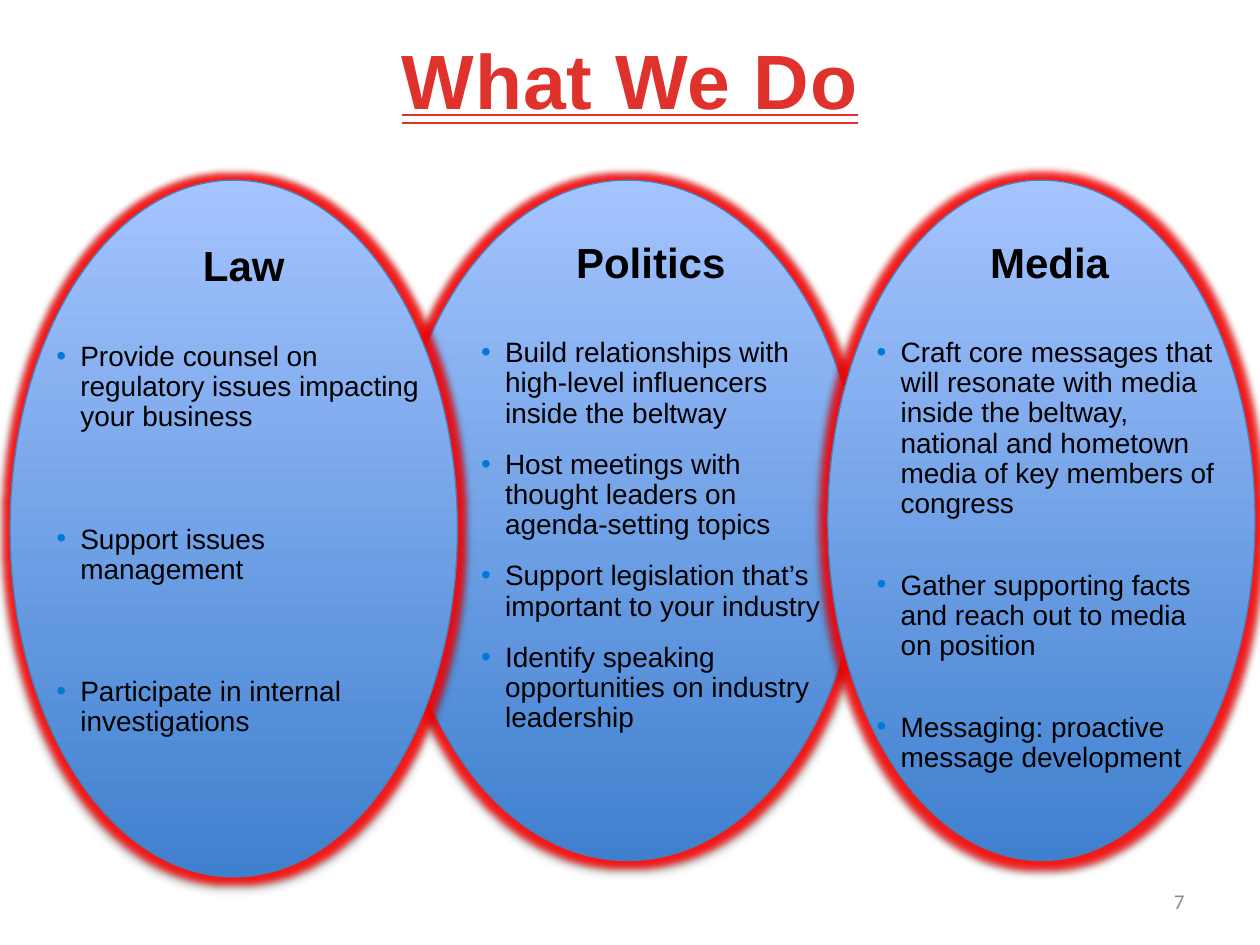
from lxml import etree
from pptx import Presentation
from pptx.dml.color import RGBColor
from pptx.enum.shapes import MSO_SHAPE as Shape
from pptx.enum.text import MSO_ANCHOR as Anchor, MSO_UNDERLINE as Underline, PP_ALIGN as Align
from pptx.oxml import parse_xml
from pptx.oxml.ns import nsdecls, qn
from pptx.util import Inches, Pt

BLANK_LAYOUT = 6
OVAL_TOP = 1.43
HEADING_GAP = 29.3

# Oval: left, width, height. Text: left, top, width, height. Gap: points between bullets.
POLITICS = {
    "oval": (3.12, 3.72, 5.4),
    "text": (3.72, 1.87, 2.89, 4.29),
    "heading": "Politics",
    "gap": 12,
    "bullets": [
        "Build relationships with high-level influencers inside the beltway",
        "Host meetings with thought leaders on agenda-setting topics",
        "Support legislation that’s important to your industry",
        "Identify speaking opportunities on industry leadership",
    ],
}
MEDIA = {
    "oval": (6.57, 3.39, 5.4),
    "text": (6.86, 1.87, 2.94, 4.7),
    "heading": "Media",
    "gap": 29.3,
    "bullets": [
        "Craft core messages that will resonate with media inside the beltway, "
        "national and hometown media of key members of congress",
        "Gather supporting facts and reach out to media on position",
        "Messaging: proactive message development",
    ],
}
LAW = {
    "oval": (0.08, 3.55, 5.53),
    "text": (0.35, 1.9, 3.17, 4.32),
    "heading": "Law",
    "gap": 52.6,
    "bullets": [
        "Provide counsel on regulatory issues impacting your business",
        "Support issues management",
        "Participate in internal investigations",
    ],
}
AREAS = [POLITICS, MEDIA, LAW]  # back to front


def color(hex_string):
    return RGBColor.from_string(hex_string)


def add_text_box(slide, left, top, width, height, anchor=Anchor.TOP):
    box = slide.shapes.add_textbox(Inches(left), Inches(top), Inches(width), Inches(height))
    frame = box.text_frame
    frame.word_wrap = True
    frame.vertical_anchor = anchor
    return frame


def set_text(paragraph, text, size, hex_string, align=Align.LEFT, bold=False, font="Arial"):
    paragraph.text = text
    paragraph.alignment = align
    paragraph.font.name = font
    paragraph.font.size = Pt(size)
    paragraph.font.bold = bold
    paragraph.font.color.rgb = color(hex_string)


def add_bullet(paragraph, hex_string):
    """Give the paragraph a hanging indent and a coloured round bullet."""
    properties = paragraph._p.get_or_add_pPr()
    properties.set("marL", str(Inches(0.19)))
    properties.set("indent", str(-Inches(0.19)))
    bullet_color = etree.SubElement(properties, qn("a:buClr"))
    etree.SubElement(bullet_color, qn("a:srgbClr"), val=hex_string)
    etree.SubElement(properties, qn("a:buFont"), typeface="Arial")
    etree.SubElement(properties, qn("a:buChar"), char="•")


def add_glow_and_shadow(shape):
    shape.shadow.inherit = False
    effects = shape._element.spPr.find(qn("a:effectLst"))
    effects.append(parse_xml(
        f'<a:glow {nsdecls("a")} rad="{Pt(8)}">'
        '<a:srgbClr val="FF0000"><a:alpha val="85000"/></a:srgbClr></a:glow>'))
    effects.append(parse_xml(
        f'<a:outerShdw {nsdecls("a")} blurRad="{Pt(3.1)}" dist="{Pt(1.8)}" '
        'dir="5400000" rotWithShape="0">'
        '<a:srgbClr val="000000"><a:alpha val="35000"/></a:srgbClr></a:outerShdw>'))


def add_oval(slide, left, width, height):
    oval = slide.shapes.add_shape(
        Shape.OVAL, Inches(left), Inches(OVAL_TOP), Inches(width), Inches(height))
    oval.fill.gradient()
    oval.fill.gradient_angle = 90
    for stop, position, hex_string in zip(
            oval.fill.gradient_stops, (0, 1), ("3F80CE", "A4C4FF")):
        stop.position = position
        stop.color.rgb = color(hex_string)
    oval.line.color.rgb = color("4B7EBC")
    oval.line.width = Pt(0.75)
    add_glow_and_shadow(oval)


def add_area_text(slide, area):
    frame = add_text_box(slide, *area["text"])
    heading = frame.paragraphs[0]
    set_text(heading, area["heading"], 24, "000000", Align.CENTER, bold=True)
    heading.space_before = Pt(6)
    heading.line_spacing = 0.9
    for index, text in enumerate(area["bullets"]):
        paragraph = frame.add_paragraph()
        set_text(paragraph, text, 16, "000000")
        paragraph.line_spacing = 0.9
        paragraph.space_before = Pt(area["gap"] if index else HEADING_GAP)
        add_bullet(paragraph, "007AD8")


def add_title(slide, text):
    paragraph = add_text_box(slide, 0, 0, 10, 1.25, Anchor.MIDDLE).paragraphs[0]
    set_text(paragraph, text, 44, "E0322D", Align.CENTER, bold=True)
    run = paragraph.runs[0]
    run.font.underline = Underline.DOUBLE_LINE
    run.font._element.set("spc", "50")


def add_page_number(slide, number):
    paragraph = add_text_box(slide, 7.17, 6.95, 2.33, 0.4, Anchor.MIDDLE).paragraphs[0]
    set_text(paragraph, number, 12, "8C8C8C", Align.RIGHT, font="Calibri")


def main():
    presentation = Presentation()
    presentation.slide_width = Inches(10)
    presentation.slide_height = Inches(7.5)
    slide = presentation.slides.add_slide(presentation.slide_layouts[BLANK_LAYOUT])
    add_title(slide, "What We Do")
    add_page_number(slide, "7")
    for area in AREAS:
        add_oval(slide, *area["oval"])
    for area in AREAS:
        add_area_text(slide, area)
    presentation.save("out.pptx")


if __name__ == "__main__":
    main()
